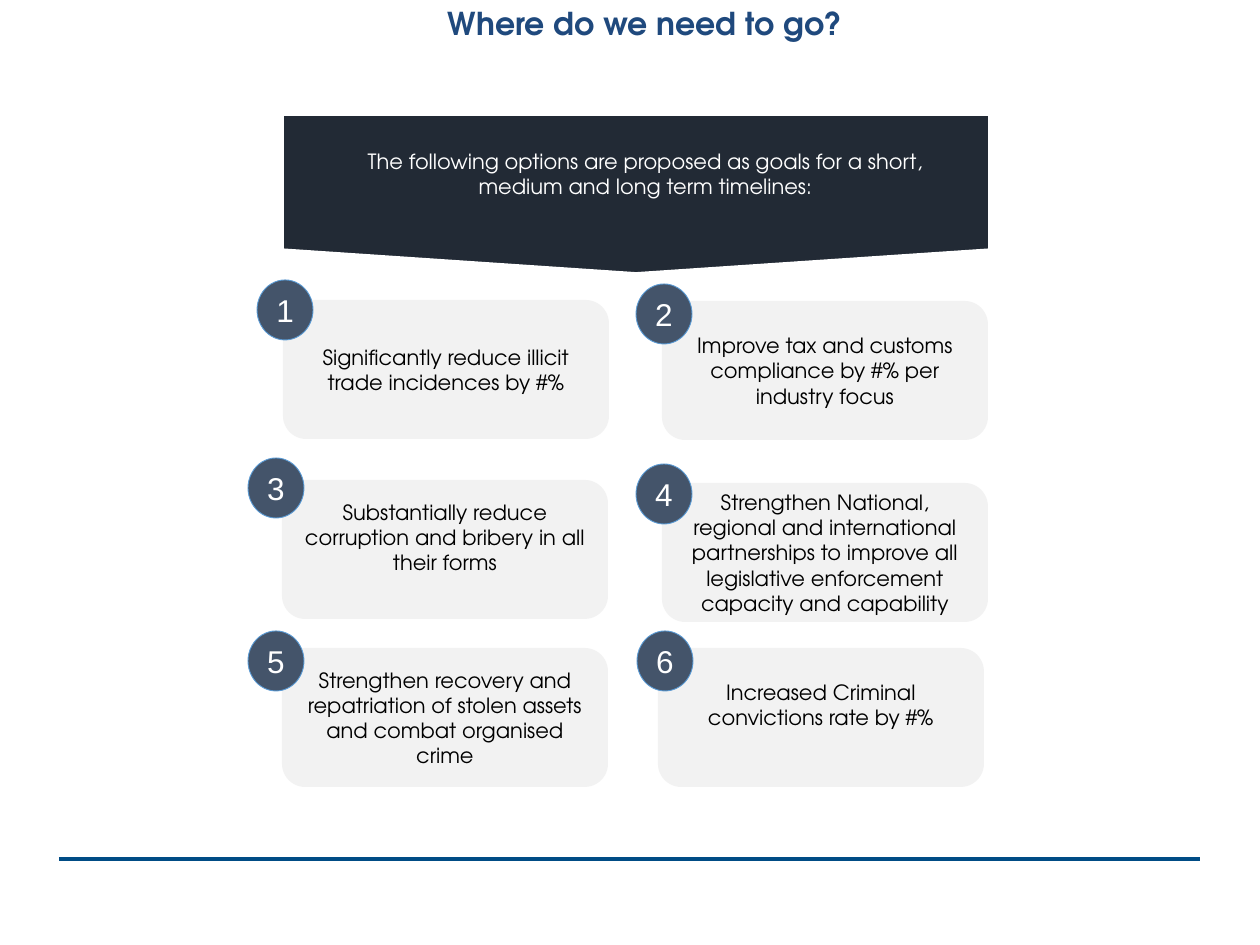
from lxml import etree
from pptx import Presentation
from pptx import util as u
from pptx.dml.color import RGBColor
from pptx.enum import shapes, text
from pptx.oxml.ns import qn

SCALE = u.Inches(1) / 126
COLOURS = {
    "title": "1F497D", "rule": "004C85", "banner": "222A35", "card": "F2F2F2",
    "badge": "44546A", "badge_edge": "5B9BD5", "white": "FFFFFF", "black": "000000",
}
HEADING_FONT = "TeX Gyre Adventor"
BADGE_FONT = "Arial"
CARD_SIZE = (326, 139)
BADGE_SIZE = (56, 60)
BLANK_LINE = 25
GOALS = [
    ("Significantly reduce illicit trade incidences by #%", (283, 300), (257, 280), 0),
    ("Improve tax and customs compliance by #% per industry focus", (662, 301), (636, 284), 0),
    ("Substantially reduce corruption and bribery in all their forms",
     (282, 480), (248, 458), BLANK_LINE),
    ("Strengthen National, regional and international partnerships to improve all "
     "legislative enforcement capacity and capability", (662, 483), (636, 464), 0),
    ("Strengthen recovery and repatriation of stolen assets and combat organised crime",
     (282, 648), (248, 631), 0),
    ("Increased Criminal convictions rate by #%", (658, 648), (637, 631), BLANK_LINE),
]


def px(length):
    """Turn pixels into EMU."""
    return u.Emu(round(length * SCALE))


def colour(name):
    """Look up a named colour."""
    return RGBColor.from_string(COLOURS[name])


def write(box, words, size, font, ink, align=text.PP_ALIGN.CENTER, bold=False,
          side=12, edge=6, lift=0):
    """Write one middle-anchored paragraph, raised by a deeper bottom margin."""
    frame = box.text_frame
    frame.word_wrap = True
    frame.vertical_anchor = text.MSO_ANCHOR.MIDDLE
    frame.margin_left = frame.margin_right = px(side)
    frame.margin_top = px(edge)
    frame.margin_bottom = px(edge + lift)
    para = frame.paragraphs[0]
    para.alignment = align
    span = para.add_run()
    span.text = words
    span.font.name = font
    span.font.size = u.Pt(size)
    span.font.bold = bold
    span.font.color.rgb = colour(ink)


def add_text(page, place, words, size, ink, **style):
    """Add a text box in the heading font."""
    box = page.shapes.add_textbox(*map(px, place))
    write(box, words, size, HEADING_FONT, ink, **style)


def add_block(page, kind, place, fill, edge=None, weight=1):
    """Add a flat filled shape, outlined if an edge colour is given."""
    block = page.shapes.add_shape(kind, *map(px, place))
    block.shadow.inherit = False
    block.fill.solid()
    block.fill.fore_color.rgb = colour(fill)
    if edge:
        block.line.color.rgb = colour(edge)
        block.line.width = u.Pt(weight)
    else:
        block.line.fill.background()
    return block


def add_card(page, spot, words, lift):
    """Add a rounded card holding one goal."""
    card = add_block(page, shapes.MSO_SHAPE.ROUNDED_RECTANGLE, spot + CARD_SIZE, "card")
    write(card, words, 12, HEADING_FONT, "black", lift=lift)


def add_badge(page, spot, number):
    """Add a numbered round badge."""
    badge = add_block(page, shapes.MSO_SHAPE.OVAL, spot + BADGE_SIZE,
                      "badge", "badge_edge", 0.5)
    write(badge, str(number), 18, BADGE_FONT, "white", side=0, edge=0)


def add_banner(page):
    """Add the downward-pointing banner and its introduction."""
    banner = add_block(page, shapes.MSO_SHAPE.PENTAGON, (557, -159, 158, 706),
                       "banner", "white")
    banner.adjustments[0] = 0.15
    banner.rotation = 90
    add_text(page, (324, 142, 643, 89),
             "The following options are proposed as goals for a short, "
             "medium and long term timelines:", 12, "white", lift=BLANK_LINE)


def add_rule(page):
    """Add the footer rule."""
    rule = page.shapes.add_connector(shapes.MSO_CONNECTOR.STRAIGHT,
                                     *map(px, (59, 859, 1200, 859)))
    rule.line.color.rgb = colour("rule")
    rule.line.width = u.Pt(2)
    etree.SubElement(rule._element.spPr, qn("a:effectLst"))


def main():
    """Build and save the slide."""
    deck = Presentation()
    deck.slide_width, deck.slide_height = px(1260), px(945)
    page = deck.slides.add_slide(deck.slide_layouts[6])
    add_rule(page)
    add_text(page, (436, 8, 824, 30), "Where do we need to go?", 18, "title",
             align=text.PP_ALIGN.LEFT, bold=True)
    for words, card_spot, _, lift in GOALS:
        add_card(page, card_spot, words, lift)
    for number, (_, _, badge_spot, _) in enumerate(GOALS, 1):
        add_badge(page, badge_spot, number)
    add_banner(page)
    deck.save("out.pptx")


if __name__ == "__main__":
    main()
